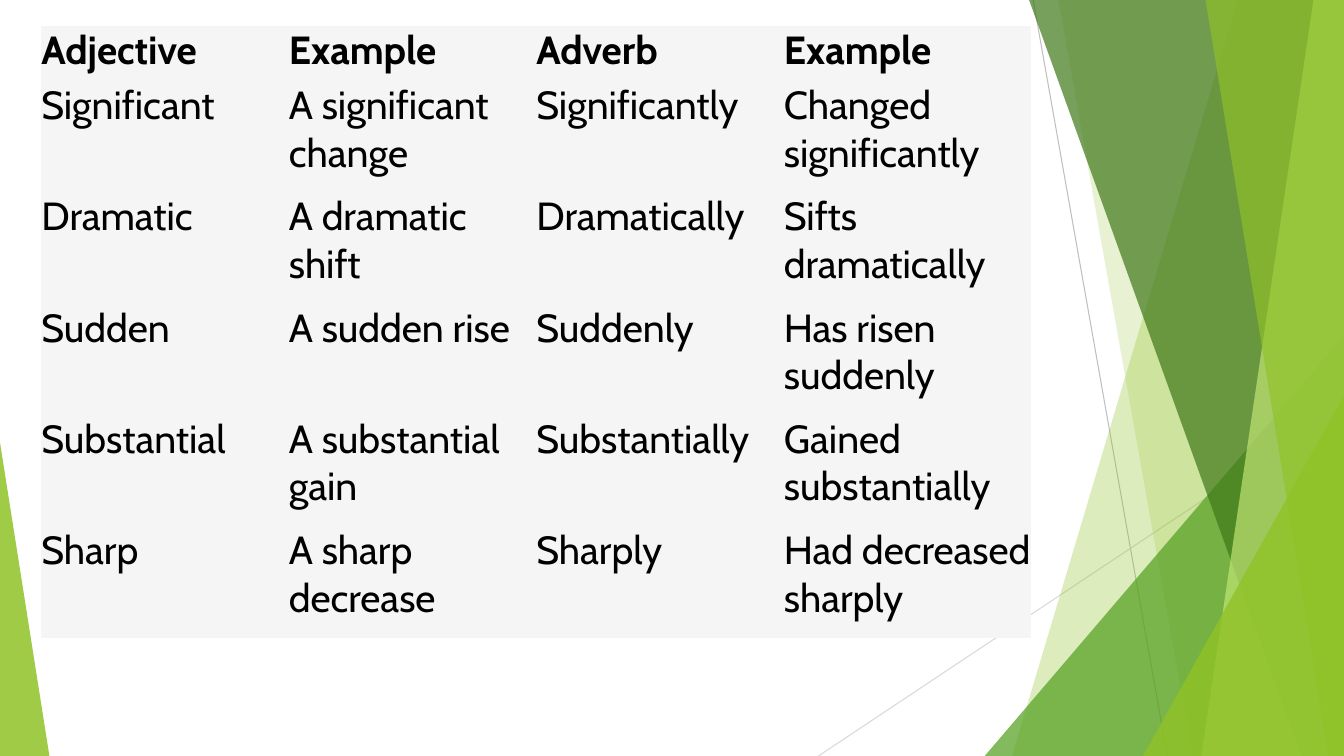
"""Build a slide with an adjective and adverb table beside green shards."""
from lxml.etree import SubElement
from pptx import Presentation
from pptx.dml.color import RGBColor as Rgb
from pptx.enum.shapes import MSO_CONNECTOR as Connector, MSO_SHAPE as Shape
from pptx.oxml.ns import qn
from pptx.util import Pt

ROWS = [
    ("Adjective", "Example", "Adverb", "Example"),
    ("Significant", "A significant change", "Significantly", "Changed significantly"),
    ("Dramatic", "A dramatic shift", "Dramatically", "Sifts dramatically"),
    ("Sudden", "A sudden rise", "Suddenly", "Has risen suddenly"),
    ("Substantial", "A substantial gain", "Substantially", "Gained substantially"),
    ("Sharp", "A sharp decrease", "Sharply", "Had decreased sharply"),
]
COLORS = {
    "lime": "90C226", "green": "54A021", "forest": "3F7819", "pale": "C0E474",
    "gray": "BFBFBF", "silver": "D9D9D9", "panel": "F5F5F5", "ink": "000000",
}
WIDTH, HEIGHT = 960, 540
RAYS = [((738, 0), (833.8, HEIGHT), "gray"), ((WIDTH, 290.2), (584.6, HEIGHT), "silver")]
DECOR = [
    ("shard", 884.2, 722.9, "lime", 30),
    ("shard", 756, 851.8, "lime", 20),
    ("corner", 703.4, 239.8, "green", 72),
    ("shard", 735.1, 929.5, "forest", 70),
    ("shard", 938.2, 858.2, "pale", 70),
    ("shard", 861.1, 949, "lime", 65),
    ("corner", 816.5, 283, "lime", 80),
]
LEFT_WEDGE = (35.3, 316.1, "lime", 85)
TABLE_LEFT, TABLE_TOP, COLUMN_WIDTH = 29.5, 18.7, 176.8
HEADER_HEIGHT, ROW_HEIGHT = 39.7, 79.5


def color(name):
    return Rgb.from_string(COLORS[name])


def tint(shape, name, opacity):
    shape.shadow.inherit = False
    shape.line.fill.background()
    shape.fill.solid()
    shape.fill.fore_color.rgb = color(name)
    tone = shape.fill._xPr.find(qn("a:solidFill"))[0]
    SubElement(tone, qn("a:alpha"), val=str(opacity * 1000))


def add_ray(page, start, end, name):
    ray = page.shapes.add_connector(Connector.STRAIGHT, *map(Pt, start + end))
    ray.line.color.rgb = color(name)
    ray.line.width = Pt(0.75)
    SubElement(ray._element.spPr, qn("a:effectLst"))


def add_shard(page, top_x, bottom_x, name, opacity):
    outline = page.shapes.build_freeform(Pt(top_x), 0)
    corners = [(WIDTH, 0), (WIDTH, HEIGHT), (bottom_x, HEIGHT)]
    outline.add_line_segments([(Pt(x), Pt(y)) for x, y in corners], close=True)
    tint(outline.convert_to_shape(), name, opacity)


def add_triangle(page, left, top, width, apex, name, opacity):
    box = map(Pt, (left, top, width, HEIGHT - top))
    triangle = page.shapes.add_shape(Shape.ISOSCELES_TRIANGLE, *box)
    triangle.adjustments[0] = apex
    tint(triangle, name, opacity)


def add_word_table(page):
    heights = [HEADER_HEIGHT] + [ROW_HEIGHT] * (len(ROWS) - 1)
    count = len(ROWS[0])
    box = map(Pt, (TABLE_LEFT, TABLE_TOP, COLUMN_WIDTH * count, sum(heights)))
    table = page.shapes.add_table(len(ROWS), count, *box).table
    table.first_row = table.horz_banding = False
    table._tbl.tblPr.find(qn("a:tableStyleId")).text = "{2D5ABB26-0587-4C30-8999-92F81FD0307C}"
    for column in table.columns:
        column.width = Pt(COLUMN_WIDTH)
    for index, (row, height, words) in enumerate(zip(table.rows, heights, ROWS)):
        row.height = Pt(height)
        for cell, word in zip(row.cells, words):
            cell.margin_left = cell.margin_right = cell.margin_top = cell.margin_bottom = 0
            cell.fill.solid()
            cell.fill.fore_color.rgb = color("panel")
            cell.text = word
            font = cell.text_frame.paragraphs[0].font
            font.name, font.size, font.bold = "Cabin", Pt(28), index == 0
            font.color.rgb = color("ink")


def main():
    deck = Presentation()
    deck.slide_width, deck.slide_height = Pt(WIDTH), Pt(HEIGHT)
    page = deck.slides.add_slide(deck.slide_layouts[6])
    for ray in RAYS:
        add_ray(page, *ray)
    for kind, first, second, name, opacity in DECOR:
        if kind == "shard":
            add_shard(page, first, second, name, opacity)
        else:
            add_triangle(page, first, second, WIDTH - first, 1, name, opacity)
    width, top, name, opacity = LEFT_WEDGE
    add_triangle(page, 0, top, width, 0, name, opacity)
    add_word_table(page)
    deck.save("out.pptx")


if __name__ == "__main__":
    main()
